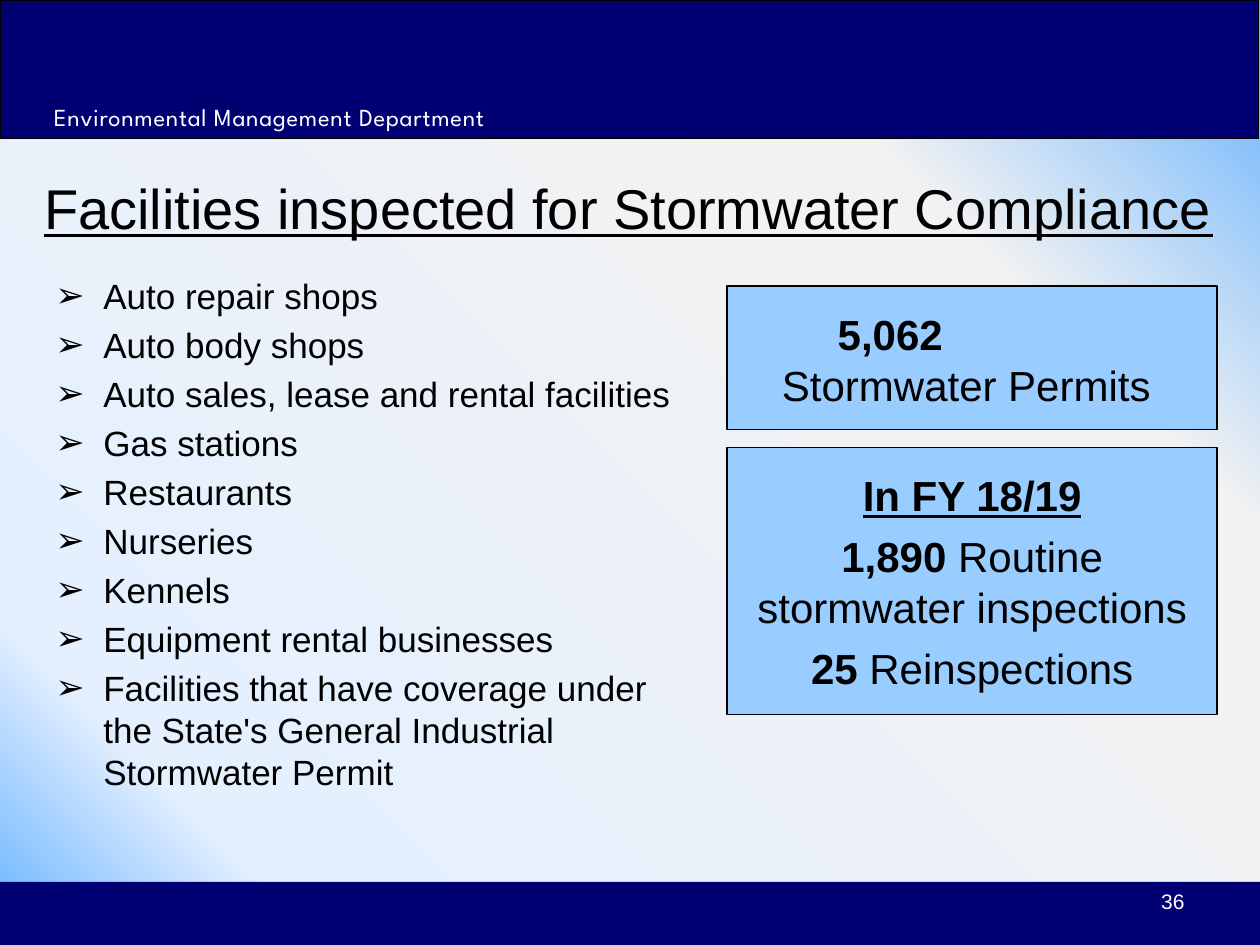
from lxml import etree
from pptx import Presentation, util as u
from pptx.dml.color import RGBColor
from pptx.enum import shapes, text
from pptx.oxml.ns import qn

NAVY, SKY, BLACK, WHITE = "000073", "99CCFF", "000000", "FFFFFF"
LEFT, MID, RIGHT = text.PP_ALIGN.LEFT, text.PP_ALIGN.CENTER, text.PP_ALIGN.RIGHT
TOP, HALF = text.MSO_ANCHOR.TOP, text.MSO_ANCHOR.MIDDLE


def hue(code):
    return RGBColor.from_string(code)


class Deck:
    """Holds the style and the current slide."""

    face = "Arial"

    def __init__(self):
        self.prs = Presentation()
        self.prs.slide_width, self.prs.slide_height = u.Inches(10), u.Inches(7.5)
        self.slide = self.prs.slides.add_slide(self.prs.slide_layouts[1])

    def back(self, stops, angle):
        fill = self.slide.background.fill
        fill.gradient()
        fill.gradient_angle = angle
        steps = self.slide.background._cSld.find(".//" + qn("a:gsLst"))
        for old in list(steps):
            steps.remove(old)
        for pos, code in stops:
            step = etree.SubElement(steps, qn("a:gs"), pos=str(pos * 1000))
            etree.SubElement(step, qn("a:srgbClr"), val=code)

    def place(self, item, box):
        item.left, item.top, item.width, item.height = map(u.Inches, box)

    def frame(self, item, anchor=TOP):
        frame = item.text_frame
        frame.word_wrap = True
        frame.auto_size = text.MSO_AUTO_SIZE.NONE
        frame.vertical_anchor = anchor
        return frame

    def font(self, run, size, color=BLACK, bold=False, line=False, face=None):
        font = run.font
        font.name, font.size = face or self.face, u.Pt(size)
        font.bold, font.underline = bold, line
        font.color.rgb = hue(color)

    def title(self, words, box):
        item = self.slide.shapes.title
        self.place(item, box)
        para = self.frame(item, HALF).paragraphs[0]
        para.text, para.alignment = words, LEFT
        self.font(para.runs[0], 32, line=True)

    def list(self, rows, box):
        item = self.slide.placeholders[1]
        self.place(item, box)
        frame = self.frame(item)
        frame.text = "\n".join(rows)
        for n, para in enumerate(frame.paragraphs):
            props = para._p.get_or_add_pPr()
            props.set("marL", str(u.Inches(0.38)))
            props.set("indent", str(-u.Inches(0.38)))
            etree.SubElement(props, qn("a:buChar"), char="➢")
            para.space_before = u.Pt(4 if n else 0)
            self.font(para.runs[0], 20)

    def rect(self, box, fill, line=None):
        item = self.slide.shapes.add_shape(
            shapes.MSO_SHAPE.RECTANGLE, *map(u.Inches, box))
        item.shadow.inherit = False
        item.fill.solid()
        item.fill.fore_color.rgb = hue(fill)
        if line:
            item.line.color.rgb = hue(line)
            item.line.width = u.Pt(0.75)
        else:
            item.line.fill.background()
        return item

    def label(self, words, box, size, align=LEFT, anchor=TOP, face=None, gap=0):
        item = self.slide.shapes.add_textbox(*map(u.Inches, box))
        para = self.frame(item, anchor).paragraphs[0]
        para.text, para.alignment = words, align
        self.font(para.runs[0], size, WHITE, face=face)
        if gap:
            para.runs[0]._r.get_or_add_rPr().set("spc", str(gap))

    def card(self, box, rows, gap):
        """Each row is a list of (words, bold, underline)."""
        frame = self.frame(self.rect(box, SKY, BLACK))
        frame.margin_top = u.Inches(0.18)
        for n, row in enumerate(rows):
            para = frame.add_paragraph() if n else frame.paragraphs[0]
            para.alignment = MID
            para.space_before = u.Pt(gap if n else 0)
            for words, bold, line in row:
                run = para.add_run()
                run.text = words
                self.font(run, 24, bold=bold, line=line)
        return frame


def main():
    deck = Deck()
    deck.back([(0, "61B0FF"), (15, "E5F0FF"), (76, "F2F2F2"), (100, "61B0FF")], 45)

    # Header and footer bands
    deck.rect((0, 0, 9.99, 1.1), NAVY, BLACK)
    deck.label("Environmental Management Department", (0.33, 0.71, 4.61, 0.43),
               14, anchor=HALF, face="League Spartan", gap=40)
    deck.rect((0, 7, 10, 0.5), NAVY)
    deck.label("36", (7.17, 7, 2.33, 0.34), 12, RIGHT)

    # Title and facility list
    deck.title("Facilities inspected for Stormwater Compliance",
               (0.25, 1.32, 9.58, 0.65))
    deck.list([
        "Auto repair shops",
        "Auto body shops",
        "Auto sales, lease and rental\u00a0facilities".replace("\u00a0", " "),
        "Gas stations",
        "Restaurants",
        "Nurseries",
        "Kennels",
        "Equipment rental businesses",
        "Facilities that have coverage under the State's General Industrial "
        "Stormwater Permit",
    ], (0.34, 2.13, 5.23, 4.62))

    # Permit count, its figure set left of centre
    permits = deck.card((5.77, 2.27, 3.89, 1.14), [
        [("5,062", True, False)],
        [("Stormwater Permits ", False, False)],
    ], 0)
    count = permits.paragraphs[0]
    count.alignment = LEFT
    count._p.get_or_add_pPr().set("marL", str(u.Inches(0.78)))

    # Inspection counts
    deck.card((5.77, 3.55, 3.89, 2.12), [
        [("In FY 18/19", True, True)],
        [("1,890", True, False), (" Routine stormwater inspections", False, False)],
        [("25 ", True, False), ("Reinspections", False, False)],
    ], 6)

    deck.prs.save("out.pptx")


if __name__ == "__main__":
    main()
